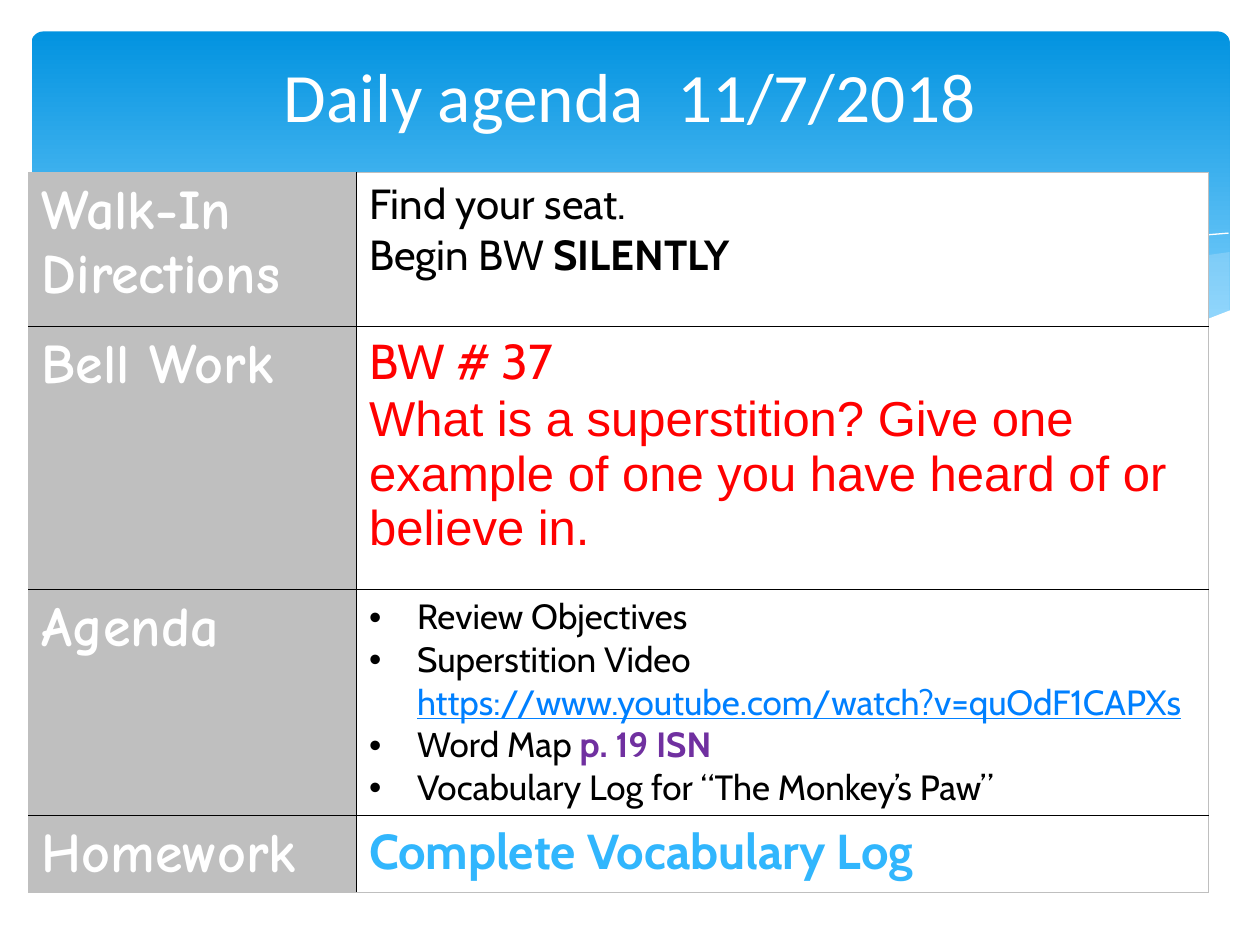
from lxml.etree import SubElement
from pptx import Presentation
from pptx.dml.color import RGBColor
from pptx.enum.shapes import MSO_SHAPE
from pptx.enum.text import MSO_ANCHOR, PP_ALIGN
from pptx.oxml.ns import qn
from pptx.util import Inches, Pt

WHITE = RGBColor(0xFF, 0xFF, 0xFF)
BLACK = RGBColor(0, 0, 0)
GREY = RGBColor(0xBF, 0xBF, 0xBF)
RED = RGBColor(0xFF, 0, 0)
PURPLE = RGBColor(0x70, 0x30, 0xA0)
LINK_BLUE = RGBColor(0, 0x80, 0xFF)
SKY = RGBColor(0x31, 0xB6, 0xFD)
PALE_BLUE = RGBColor(0xC6, 0xE7, 0xFC)
BANNER_TOP = RGBColor(0x02, 0x93, 0xE0)
BANNER_BOTTOM = RGBColor(0x83, 0xD3, 0xFE)

RIGHT_SWELL = [
    (9.76, 2), (9.48, 2.04), (9.21, 2.1), (8.91, 2.16), (8.61, 2.23),
    (8.05, 2.37), (7.53, 2.48), (7.06, 2.57), (6.61, 2.65), (6.91, 2.69),
    (7.19, 2.72), (7.45, 2.75), (7.69, 2.77), (8.03, 2.78), (8.35, 2.77),
    (8.63, 2.75), (8.89, 2.72), (9.13, 2.67), (9.35, 2.62), (9.49, 2.57),
    (9.63, 2.52), (9.76, 2.47),
]
MIDDLE_SWELL = [
    (8.93, 2.73), (8.66, 2.69), (8.07, 2.6), (7.41, 2.47), (6.68, 2.31),
    (6.29, 2.22), (5.98, 2.14), (5.69, 2.08), (5.41, 2.03), (5.14, 1.98),
    (4.89, 1.94), (4.42, 1.89), (3.99, 1.86), (3.61, 1.85), (3.28, 1.87),
    (2.86, 1.91), (3.23, 1.96), (3.62, 2.03), (4.04, 2.11), (4.49, 2.22),
    (4.91, 2.32), (5.3, 2.4), (5.66, 2.48), (6.01, 2.55), (6.34, 2.61),
    (6.65, 2.66), (6.95, 2.7), (7.22, 2.74), (7.61, 2.77), (7.96, 2.78),
    (8.28, 2.78), (8.57, 2.77),
]
FALLING_LINE = [
    (3.09, 1.95), (3.28, 1.92), (3.53, 1.89), (3.87, 1.87), (4.33, 1.87),
    (4.69, 1.89), (5.1, 1.92), (5.56, 1.97), (6.08, 2.04), (6.65, 2.13),
    (7.27, 2.26), (7.95, 2.41), (8.69, 2.61), (9.07, 2.72),
]
RISING_LINE = [
    (6.13, 2.57), (6.53, 2.46), (6.95, 2.35), (7.48, 2.23), (8.06, 2.1),
    (8.66, 1.99), (8.95, 1.94), (9.24, 1.9), (9.51, 1.87), (9.75, 1.85),
]
WHITE_WAVE = [
    (9.77, 2.46), (9.59, 2.53), (9.4, 2.59), (9.2, 2.65), (8.99, 2.69),
    (8.75, 2.73), (8.5, 2.75), (8.09, 2.77), (7.78, 2.76), (7.44, 2.74),
    (7.08, 2.7), (6.68, 2.65), (6.26, 2.58), (5.79, 2.5), (5.29, 2.39),
    (4.75, 2.27), (4.47, 2.2), (3.91, 2.07), (3.4, 1.97), (2.92, 1.9),
    (2.5, 1.86), (2.11, 1.84), (1.77, 1.84), (1.46, 1.85), (1.19, 1.87),
    (0.95, 1.91), (0.76, 1.95), (0.59, 1.99), (0.46, 2.03), (0.36, 2.07),
    (0.23, 2.13), (0.23, 3.29), (9.77, 3.29),
]

COLS = [2.6, 6.76]
ROWS = [1.22, 2.09, 1.79, 0.6]
LABELS = ["Walk-In Directions", "Bell Work", "Agenda", "Homework"]


def run(text, size, color=BLACK, font="Cabin", bold=False, underline=False):
    return text, size, color, font, bold, underline


DETAILS = [
    [[run("Find your seat.", 24)],
     [run("Begin BW ", 24), run("SILENTLY", 24, bold=True)]],
    [[run("BW # 37", 28, RED)],
     [run("What is a superstition? Give one example of one you have heard "
          "of or believe in.", 28, RED, "Arial")]],
    [[run("Review Objectives", 20)],
     [run("Superstition Video ", 20),
      run("https://www.youtube.com/watch?v=quOdF1CAPXs", 20, LINK_BLUE,
          underline=True)],
     [run("Word Map ", 20), run("p. 19 ISN", 20, PURPLE, bold=True)],
     [run("Vocabulary Log for “The Monkey’s Paw”", 20)]],
    [[run("Complete Vocabulary Log", 28, SKY, bold=True)]],
]


def add_banner(s):
    sp = s.shapes.add_shape(MSO_SHAPE.ROUNDED_RECTANGLE, Inches(0.25),
                            Inches(0.25), Inches(9.51), Inches(2.7))
    sp.adjustments[0] = 0.034
    sp.shadow.inherit = False
    sp.line.fill.background()
    sp.fill.gradient()
    sp.fill.gradient_angle = 270
    stops = zip(sp.fill.gradient_stops, (0, 0.9), (BANNER_TOP, BANNER_BOTTOM))
    for stop, position, color in stops:
        stop.position = position
        stop.color.rgb = color


def add_outline(s, points, closed):
    pts = [(Inches(x), Inches(y)) for x, y in points]
    builder = s.shapes.build_freeform(*pts[0])
    builder.add_line_segments(pts[1:], close=closed)
    sp = builder.convert_to_shape()
    sp.shadow.inherit = False
    return sp


def add_wave(s, points, color, opacity=100):
    sp = add_outline(s, points, True)
    sp.line.fill.background()
    sp.fill.solid()
    sp.fill.fore_color.rgb = color
    if opacity < 100:
        clr = next(sp.element.spPr.iter(qn("a:srgbClr")))
        SubElement(clr, qn("a:alpha"), val=str(opacity * 1000))


def add_curve(s, points):
    sp = add_outline(s, points, False)
    sp.fill.background()
    sp.line.color.rgb = WHITE
    sp.line.width = Pt(0)


def add_run(p, text, size, color, font, bold, underline):
    r = p.add_run()
    r.text = text
    r.font.size = Pt(size)
    r.font.color.rgb = color
    r.font.name = font
    r.font.bold = bold
    r.font.underline = underline


def set_title(s):
    title = s.shapes.title
    title.left, title.top = Inches(0.5), Inches(0.37)
    title.width, title.height = Inches(9), Inches(1.37)
    title.element.getparent().append(title.element)
    tf = title.text_frame
    tf.vertical_anchor = MSO_ANCHOR.TOP
    p = tf.paragraphs[0]
    p.alignment = PP_ALIGN.CENTER
    add_run(p, *run("Daily agenda\t 11/7/2018", 39.6, WHITE, "Calibri"))


def set_bullet(p):
    pPr = p._p.get_or_add_pPr()
    pPr.set("marL", str(Inches(0.38)))
    pPr.set("indent", str(-Inches(0.38)))
    SubElement(pPr, qn("a:buFont"), typeface="Arial")
    SubElement(pPr, qn("a:buChar"), char="•")


def set_borders(cell, colors):
    tcPr = cell._tc.get_or_add_tcPr()
    for side, color in zip("LRTB", colors):
        ln = SubElement(tcPr, qn(f"a:ln{side}"), w=str(Pt(1)))
        SubElement(SubElement(ln, qn("a:solidFill")), qn("a:srgbClr"),
                   val=str(color))


def fill_cell(cell, paragraphs, fill, borders, bulleted=False):
    set_borders(cell, borders)
    cell.fill.solid()
    cell.fill.fore_color.rgb = fill
    tf = cell.text_frame
    for i, runs in enumerate(paragraphs):
        p = tf.add_paragraph() if i else tf.paragraphs[0]
        if bulleted:
            set_bullet(p)
        for item in runs:
            add_run(p, *item)


def add_agenda_table(s):
    table = s.shapes.add_table(len(ROWS), len(COLS), Inches(0.23),
                               Inches(1.37), Inches(sum(COLS)),
                               Inches(sum(ROWS))).table
    table.first_row = table.horz_banding = False
    for col, width in zip(table.columns, COLS):
        col.width = Inches(width)
    for i, height in enumerate(ROWS):
        table.rows[i].height = Inches(height)
        top = BLACK if i else GREY
        bottom = BLACK if i < len(ROWS) - 1 else GREY
        label = run(LABELS[i], 32, WHITE, "Comic Neue", bold=True)
        fill_cell(table.cell(i, 0), [[label]], GREY,
                  (GREY, BLACK, top, bottom))
        fill_cell(table.cell(i, 1), DETAILS[i], WHITE,
                  (BLACK, GREY, top, bottom), LABELS[i] == "Agenda")


def main():
    prs = Presentation()
    prs.slide_width, prs.slide_height = Inches(10), Inches(7.5)
    s = prs.slides.add_slide(prs.slide_layouts[5])
    add_banner(s)
    add_wave(s, RIGHT_SWELL, PALE_BLUE, 29)
    add_wave(s, MIDDLE_SWELL, PALE_BLUE, 40)
    add_curve(s, FALLING_LINE)
    add_curve(s, RISING_LINE)
    add_wave(s, WHITE_WAVE, WHITE)
    set_title(s)
    add_agenda_table(s)
    prs.save("out.pptx")


if __name__ == "__main__":
    main()
